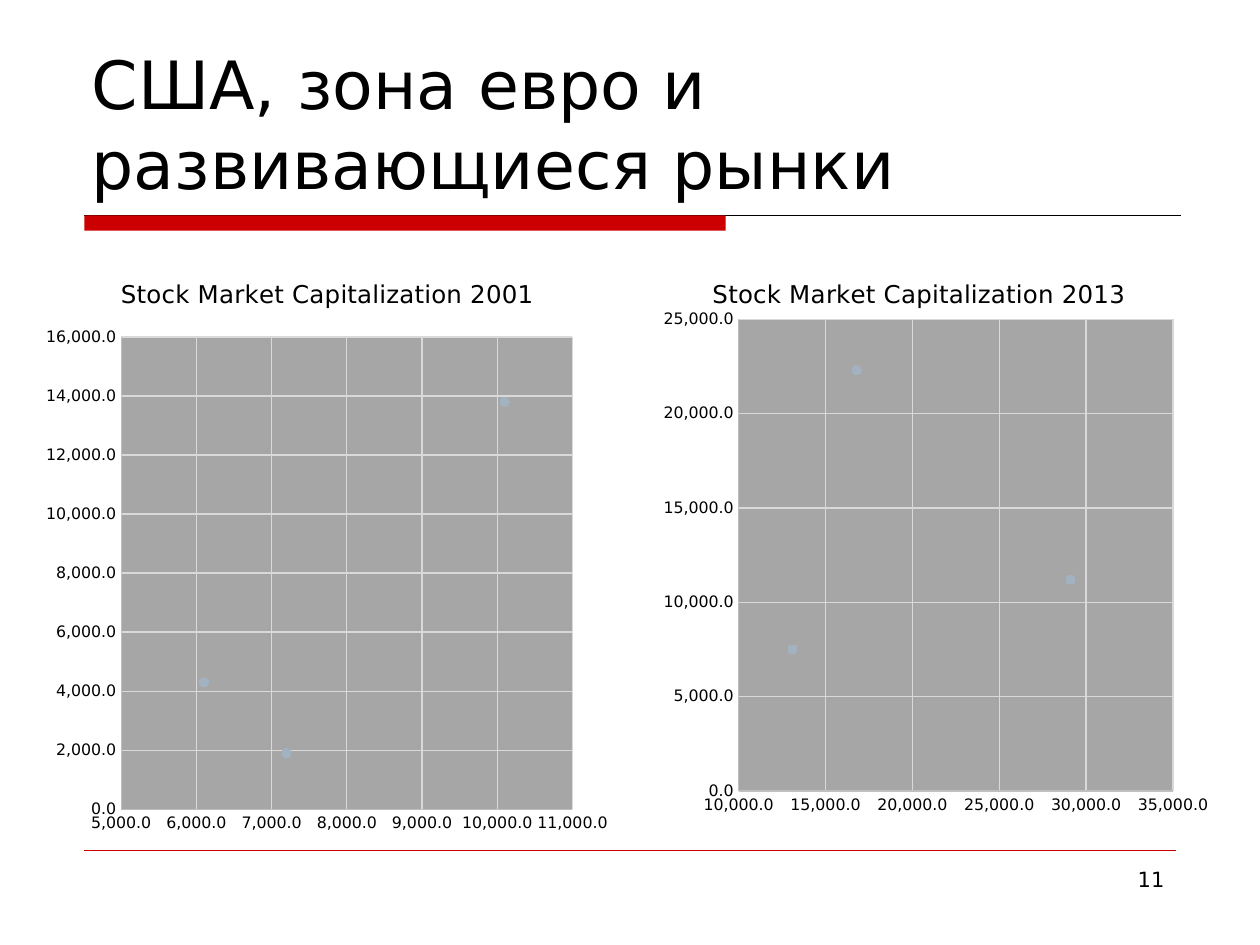
from lxml.etree import SubElement
from pptx import Presentation
from pptx.chart.data import XyChartData
from pptx.dml.color import RGBColor
from pptx.enum.chart import XL_CHART_TYPE, XL_MARKER_STYLE, XL_TICK_MARK
from pptx.enum.shapes import MSO_CONNECTOR, MSO_SHAPE
from pptx.enum.text import MSO_ANCHOR, PP_ALIGN
from pptx.oxml import parse_xml
from pptx.oxml.ns import nsdecls, qn
from pptx.util import Inches, Pt

COLORS = {"red": "CC0000", "black": "000000", "white": "FFFFFF", "plot": "A6A6A6",
          "grid": "D9D9D9", "axis": "BFBFBF", "marker": "A3B2C1"}


def style_font(font, size):
    for name, value in {"name": "DejaVu Sans", "size": Pt(size), "bold": False}.items():
        setattr(font, name, value)
    font.color.rgb = RGBColor.from_string(COLORS["black"])


def fill_xml(color):
    return parse_xml(f'<c:spPr {nsdecls("c", "a")}><a:solidFill><a:srgbClr val="{COLORS[color]}"/>'
                     '</a:solidFill><a:ln><a:noFill/></a:ln></c:spPr>')


deck = Presentation()
deck.slide_width, deck.slide_height = Inches(10), Inches(7.5)
page = deck.slides.add_slide(deck.slide_layouts[6])

# Rules under the title and above the page number
for right, y, color, width in [(9.37, 1.71, "black", 0.75), (9.33, 6.75, "red", 0.25)]:
    rule = page.shapes.add_connector(MSO_CONNECTOR.STRAIGHT, Inches(0.67), Inches(y),
                                     Inches(right), Inches(y))
    rule.line.color.rgb = RGBColor.from_string(COLORS[color])
    rule.line.width = Pt(width)
    SubElement(rule._element.spPr, qn("a:effectLst"))

# Red bar
bar = page.shapes.add_shape(MSO_SHAPE.RECTANGLE, Inches(0.67), Inches(1.71),
                            Inches(5.09), Inches(0.12))
bar.shadow.inherit = False
bar.fill.solid()
bar.fill.fore_color.rgb = RGBColor.from_string(COLORS["red"])
bar.line.fill.background()

# Title and page number
texts = [
    ("США, зона евро и развивающиеся рынки", (0.63, 0.33, 8.75, 1.33), 38,
     MSO_ANCHOR.BOTTOM, PP_ALIGN.LEFT),
    ("11", (7.17, 6.83, 2.17, 0.52), 12, MSO_ANCHOR.TOP, PP_ALIGN.RIGHT),
]
for text, place, size, anchor, alignment in texts:
    box = page.shapes.add_textbox(*map(Inches, place))
    frame = box.text_frame
    frame.word_wrap = True
    frame.vertical_anchor = anchor
    para = frame.paragraphs[0]
    para.alignment = alignment
    span = para.add_run()
    span.text = text
    style_font(span.font, size)

# Scatter charts: place, inner plot area, font size, x scale, y scale, points
charts = [
    ("Stock Market Capitalization 2001", (0.28, 2.02, 4.64, 4.68), (0.147, 0.14, 0.772, 0.801),
     9, (5000, 11000, 1000), (0, 16000, 2000),
     [(None, None), (6100, 4300), (10100, 13800), (7200, 1900)]),
    ("Stock Market Capitalization 2013", (4.85, 2.02, 4.89, 4.68), (0.207, 0.11, 0.705, 0.8),
     10, (10000, 35000, 5000), (0, 25000, 5000),
     [(13100, 7500), (16800, 22300), (29100, 11200)]),
]
for name, place, plot_place, size, x_scale, y_scale, points in charts:
    data = XyChartData()
    series_data = data.add_series(name)
    for x, y in points:
        series_data.add_data_point(x, y)
    chart = page.shapes.add_chart(XL_CHART_TYPE.XY_SCATTER, *map(Inches, place), data).chart
    chart.has_legend = False
    style_font(chart.font, size)
    chart.has_title = True
    chart.chart_title.include_in_layout = False
    para = chart.chart_title.text_frame.paragraphs[0]
    span = para.add_run()
    span.text = name
    style_font(span.font, 14)

    # Axes and gridlines
    for axis, scale in [(chart.category_axis, x_scale), (chart.value_axis, y_scale)]:
        settings = {"minimum_scale": scale[0], "maximum_scale": scale[1],
                    "major_unit": scale[2], "has_major_gridlines": True,
                    "major_tick_mark": XL_TICK_MARK.NONE, "minor_tick_mark": XL_TICK_MARK.NONE}
        for key, value in settings.items():
            setattr(axis, key, value)
        axis.tick_labels.number_format = "#,##0.0"
        axis.tick_labels.number_format_is_linked = False
        style_font(axis.tick_labels.font, 9)
        for line, color in [(axis.format.line, "axis"),
                            (axis.major_gridlines.format.line, "grid")]:
            line.color.rgb = RGBColor.from_string(COLORS[color])
            line.width = Pt(0.75)

    # Markers without a joining line
    plot = chart.plots[0]
    plot.vary_by_categories = False
    series = plot.series[0]
    series.smooth = False
    series.format.line.fill.background()
    marker = series.marker
    marker.style = XL_MARKER_STYLE.CIRCLE
    marker.size = 5
    marker.format.fill.solid()
    marker.format.fill.fore_color.rgb = RGBColor.from_string(COLORS["marker"])
    marker.format.line.color.rgb = RGBColor.from_string(COLORS["marker"])

    # Plot area position and backgrounds
    chart_xml = chart._chartSpace.find(qn("c:chart"))
    plot_area = chart_xml.find(qn("c:plotArea"))
    for old in plot_area.findall(qn("c:layout")):
        plot_area.remove(old)
    layout = parse_xml(f'<c:layout {nsdecls("c")}><c:manualLayout/></c:layout>')
    modes = [("layoutTarget", "inner"), ("xMode", "edge"), ("yMode", "edge")]
    for tag, value in modes + list(zip("xywh", plot_place)):
        SubElement(layout[0], qn(f"c:{tag}")).set("val", str(value))
    plot_area.insert(0, layout)
    plot_area.append(fill_xml("plot"))
    chart_xml.addnext(fill_xml("white"))

    # An empty point keeps its index but has no cached value
    for point in list(plot_area.iter(qn("c:pt"))):
        if point.findtext(qn("c:v")) == "None":
            point.getparent().remove(point)

deck.save("out.pptx")
